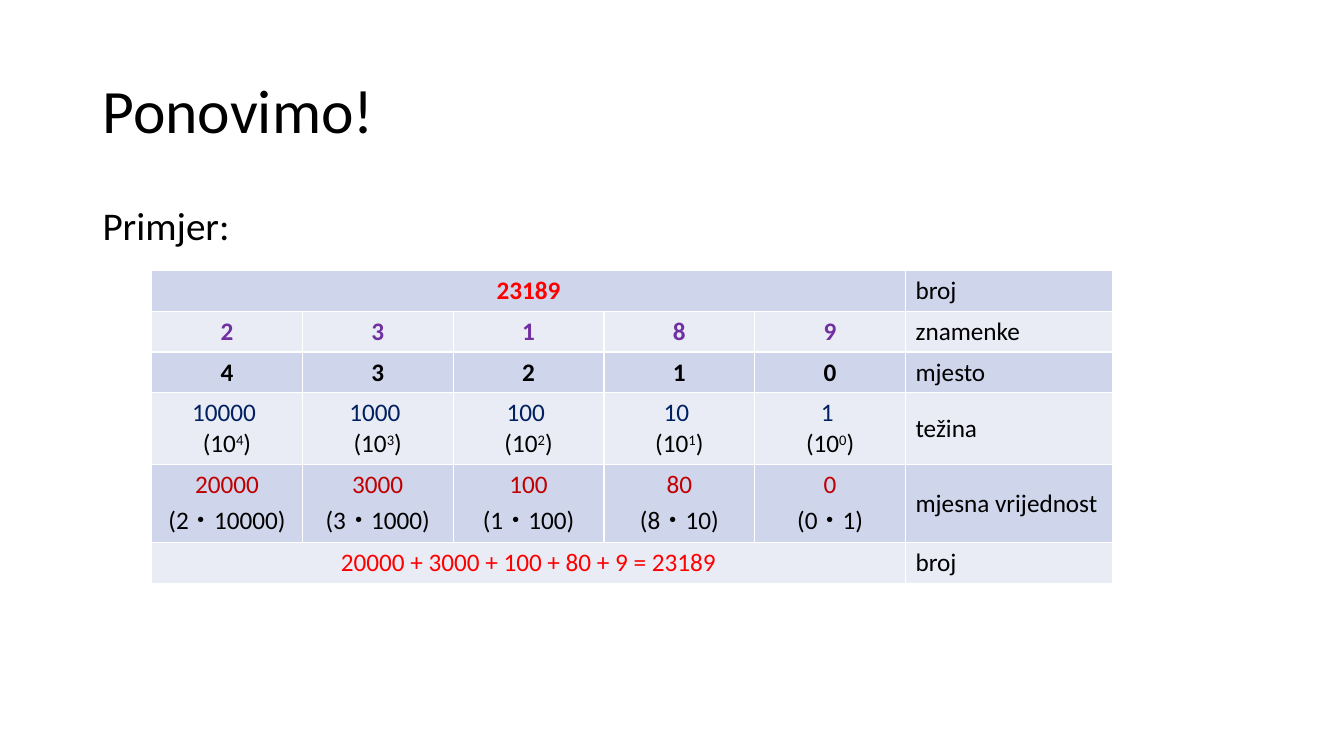
"""Build the slide that reviews place values of the number 23189."""
import lxml.etree
import pptx
import pptx.dml.color
import pptx.enum.text
import pptx.oxml.ns
import pptx.util

Cm = pptx.util.Cm
Pt = pptx.util.Pt
ALIGN = pptx.enum.text.PP_ALIGN
ANCHOR = pptx.enum.text.MSO_ANCHOR

TITLE = "Ponovimo!"
INTRO = "Primjer:"
LABELS = ["broj", "znamenke", "mjesto", "težina", "mjesna vrijednost", "broj"]
NUMBER = "23189"
SUM = "20000 + 3000 + 100 + 80 + 9 = 23189"
DIGITS = [2, 3, 1, 8, 9]
FACTORS = [2, 3, 1, 8, 0]
PLACES = [4, 3, 2, 1, 0]

FONT = "Calibri"
BLACK, RED, PURPLE = "000000", "FF0000", "7030A0"
NAVY, DARK_RED, WHITE = "002060", "C00000", "FFFFFF"
BANDS = ["CFD5EA", "E9EBF5"]
COLUMN_WIDTHS = [3.8] * 5 + [5.22]
ROW_HEIGHTS = [1.03, 1.03, 1.03, 1.8, 1.96, 1.03]


def color(value):
    return pptx.dml.color.RGBColor.from_string(value)


def format_paragraph(paragraph, size, font_color=BLACK, bold=False, align=ALIGN.LEFT):
    paragraph.alignment = align
    paragraph.font.name = FONT
    paragraph.font.size = Pt(size)
    paragraph.font.bold = bold
    paragraph.font.color.rgb = color(font_color)


def fill_placeholder(shape, text, size, top, height, anchor):
    shape.left, shape.top, shape.width, shape.height = Cm(2.33), Cm(top), Cm(29.21), Cm(height)
    shape.text_frame.vertical_anchor = anchor
    paragraph = shape.text_frame.paragraphs[0]
    paragraph.text = text
    paragraph.line_spacing = 0.9
    properties = paragraph._p.get_or_add_pPr()
    properties.set("marL", "0")
    properties.set("indent", "0")
    lxml.etree.SubElement(properties, pptx.oxml.ns.qn("a:buNone"))
    format_paragraph(paragraph, size)


def style_cell(cell, band):
    properties = cell._tc.get_or_add_tcPr()
    for side in ("lnL", "lnR", "lnT", "lnB"):
        line = lxml.etree.SubElement(properties, pptx.oxml.ns.qn(f"a:{side}"), w=str(Pt(1)))
        fill = lxml.etree.SubElement(line, pptx.oxml.ns.qn("a:solidFill"))
        lxml.etree.SubElement(fill, pptx.oxml.ns.qn("a:srgbClr"), val=WHITE)
    cell.fill.solid()
    cell.fill.fore_color.rgb = color(band)
    cell.vertical_anchor = ANCHOR.MIDDLE


def write_cell(cell, *lines, bold=False, align=ALIGN.CENTER):
    """Write (text, colour) lines, raising what follows a caret up to the bracket."""
    for index, (text, font_color) in enumerate(lines):
        frame = cell.text_frame
        paragraph = frame.paragraphs[0] if index == 0 else frame.add_paragraph()
        format_paragraph(paragraph, 18, font_color, bold, align)
        base, caret, power = text.partition("^")
        paragraph.add_run().text = base
        if caret:
            exponent = paragraph.add_run()
            exponent.text = power.rstrip(")")
            exponent.font._element.set("baseline", "30000")
            paragraph.add_run().text = ")"


def add_place_table(slide):
    table = slide.shapes.add_table(
        len(ROW_HEIGHTS), len(COLUMN_WIDTHS), Cm(3.82), Cm(6.81),
        Cm(sum(COLUMN_WIDTHS)), Cm(sum(ROW_HEIGHTS))).table
    table.first_row = table.horz_banding = False
    for column, width in zip(table.columns, COLUMN_WIDTHS):
        column.width = Cm(width)
    for index, (row, height) in enumerate(zip(table.rows, ROW_HEIGHTS)):
        row.height = Cm(height)
        for cell in row.cells:
            style_cell(cell, BANDS[index % 2])
        write_cell(row.cells[5], (LABELS[index], BLACK), align=ALIGN.LEFT)

    for row, text, bold in ((0, NUMBER, True), (5, SUM, False)):
        table.cell(row, 0).merge(table.cell(row, 4))
        write_cell(table.cell(row, 0), (text, RED), bold=bold)
    for column, (digit, factor, place) in enumerate(zip(DIGITS, FACTORS, PLACES)):
        weight = 10 ** place
        write_cell(table.cell(1, column), (str(digit), PURPLE), bold=True)
        write_cell(table.cell(2, column), (str(place), BLACK), bold=True)
        write_cell(table.cell(3, column), (f"{weight} ", NAVY), (f"(10^{place})", BLACK))
        write_cell(table.cell(4, column), (str(factor * weight), DARK_RED),
                   (f"({factor}・{weight})", BLACK))


def main():
    presentation = pptx.Presentation()
    presentation.slide_width, presentation.slide_height = Cm(33.87), Cm(19.05)
    slide = presentation.slides.add_slide(presentation.slide_layouts[1])
    fill_placeholder(slide.shapes.title, TITLE, 44, 1.01, 3.68, ANCHOR.MIDDLE)
    fill_placeholder(slide.placeholders[1], INTRO, 28, 5.07, 12.09, ANCHOR.TOP)
    add_place_table(slide)
    presentation.save("out.pptx")


if __name__ == "__main__":
    main()
